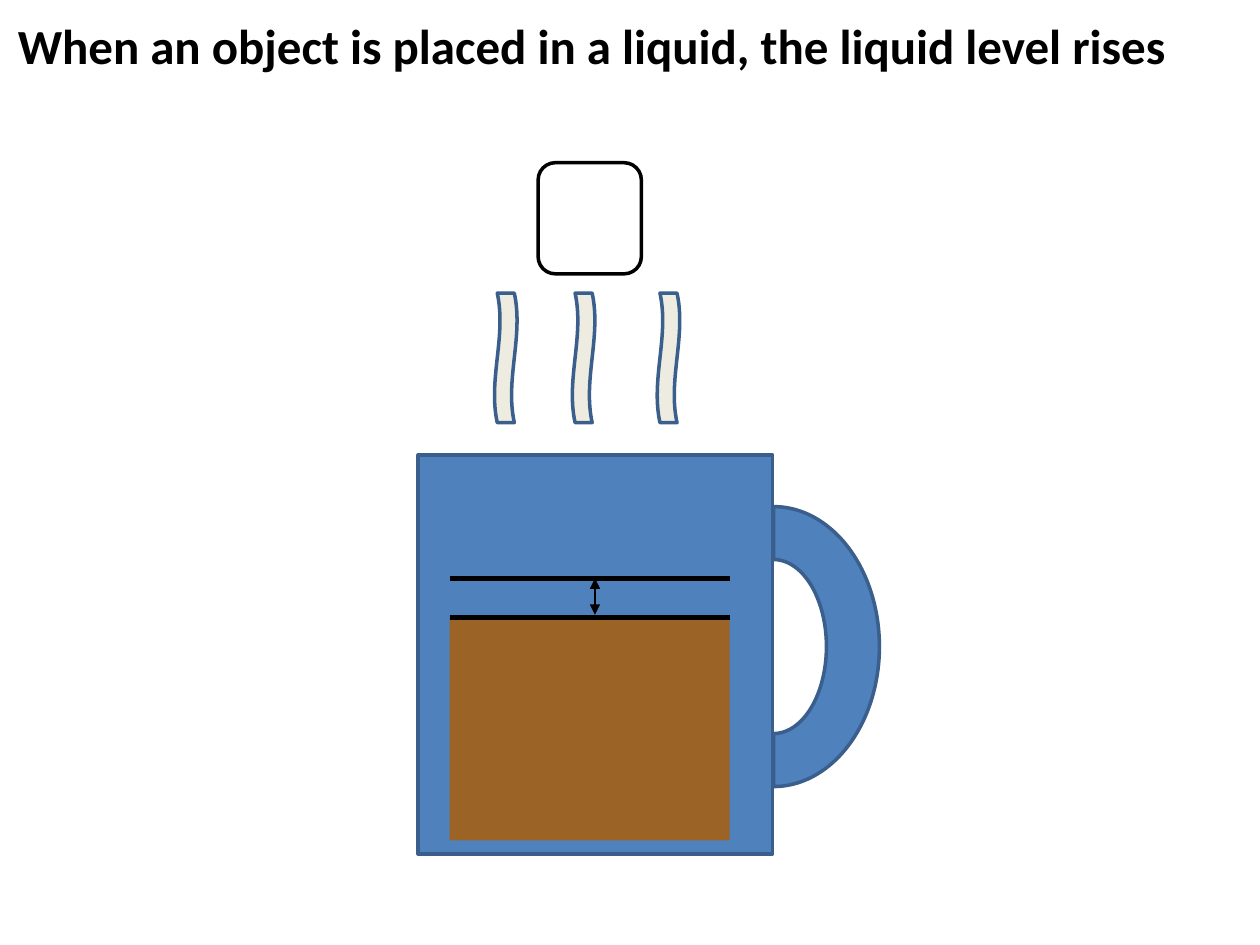
import pptx
import pptx.dml.color
import pptx.enum.shapes
import pptx.enum.text
import pptx.oxml.xmlchemy
import pptx.util

Pt = pptx.util.Pt
SHAPES = pptx.enum.shapes.MSO_SHAPE
COLOURS = {
    "black": "000000",
    "white": "FFFFFF",
    "mug": "4F81BD",
    "outline": "3A5F8C",
    "steam": "EEECE1",
    "coffee": "9B6325",
}
LIQUID_LEFT, LIQUID_WIDTH = 257, 160
LEVEL_BEFORE, LEVEL_AFTER = 352.8, 330.5


def colour(name):
    return pptx.dml.color.RGBColor.from_string(COLOURS[name])


def add_title(slide, text):
    title = slide.shapes.title
    title.left, title.top, title.width, title.height = Pt(3), Pt(5), Pt(720), Pt(38)
    frame = title.text_frame
    frame.word_wrap = True
    frame.vertical_anchor = pptx.enum.text.MSO_ANCHOR.TOP
    paragraph = frame.paragraphs[0]
    paragraph.alignment = pptx.enum.text.PP_ALIGN.LEFT
    run = paragraph.add_run()
    run.text = text
    run.font.name = "Calibri"
    run.font.size = Pt(28)
    run.font.bold = True
    run.font.color.rgb = colour("black")


def add_figure(slide, kind, left, top, width, height, fill, line=None, rotation=0):
    shape = slide.shapes.add_shape(kind, Pt(left), Pt(top), Pt(width), Pt(height))
    shape.rotation = rotation
    shape.shadow.inherit = False
    shape.fill.solid()
    shape.fill.fore_color.rgb = colour(fill)
    if line:
        shape.line.color.rgb = colour(line)
        shape.line.width = Pt(2)
    else:
        shape.line.fill.background()


def add_line(slide, start, end, width, arrows=False):
    connector = slide.shapes.add_connector(
        pptx.enum.shapes.MSO_CONNECTOR.STRAIGHT, *map(Pt, start + end))
    connector.line.color.rgb = colour("black")
    connector.line.width = Pt(width)
    new_element = pptx.oxml.xmlchemy.OxmlElement
    if arrows:
        line_xml = connector.line._get_or_add_ln()
        for tag in ("a:headEnd", "a:tailEnd"):
            arrow = new_element(tag)
            arrow.set("type", "triangle")
            line_xml.append(arrow)
    connector._element.spPr.append(new_element("a:effectLst"))


def add_level(slide, y):
    add_line(slide, (LIQUID_LEFT, y), (LIQUID_LEFT + LIQUID_WIDTH, y), 3)


def main():
    presentation = pptx.Presentation()
    presentation.slide_width, presentation.slide_height = Pt(720), Pt(540)
    slide = presentation.slides.add_slide(presentation.slide_layouts[5])
    add_title(slide, "When an object is placed in a liquid, the liquid level rises")

    for left in (252, 296.5, 345):
        add_figure(slide, SHAPES.WAVE, left, 198, 74, 13, "steam", "outline", 90)

    # Mug, handle, sugar cube and coffee
    add_figure(slide, SHAPES.RECTANGLE, 239, 260, 202.5, 228, "mug", "outline")
    add_figure(slide, SHAPES.BLOCK_ARC, 362, 309, 160, 121, "mug", "outline", 90)
    add_figure(slide, SHAPES.ROUNDED_RECTANGLE, 307.5, 93, 59, 63.5, "white", "black")
    add_figure(slide, SHAPES.RECTANGLE, LIQUID_LEFT, LEVEL_BEFORE, LIQUID_WIDTH, 127.5, "coffee")

    add_level(slide, LEVEL_BEFORE)
    add_level(slide, LEVEL_AFTER)
    add_line(slide, (340, LEVEL_AFTER), (340, LEVEL_BEFORE - 1.5), 0.75, arrows=True)

    presentation.save("out.pptx")


if __name__ == "__main__":
    main()
